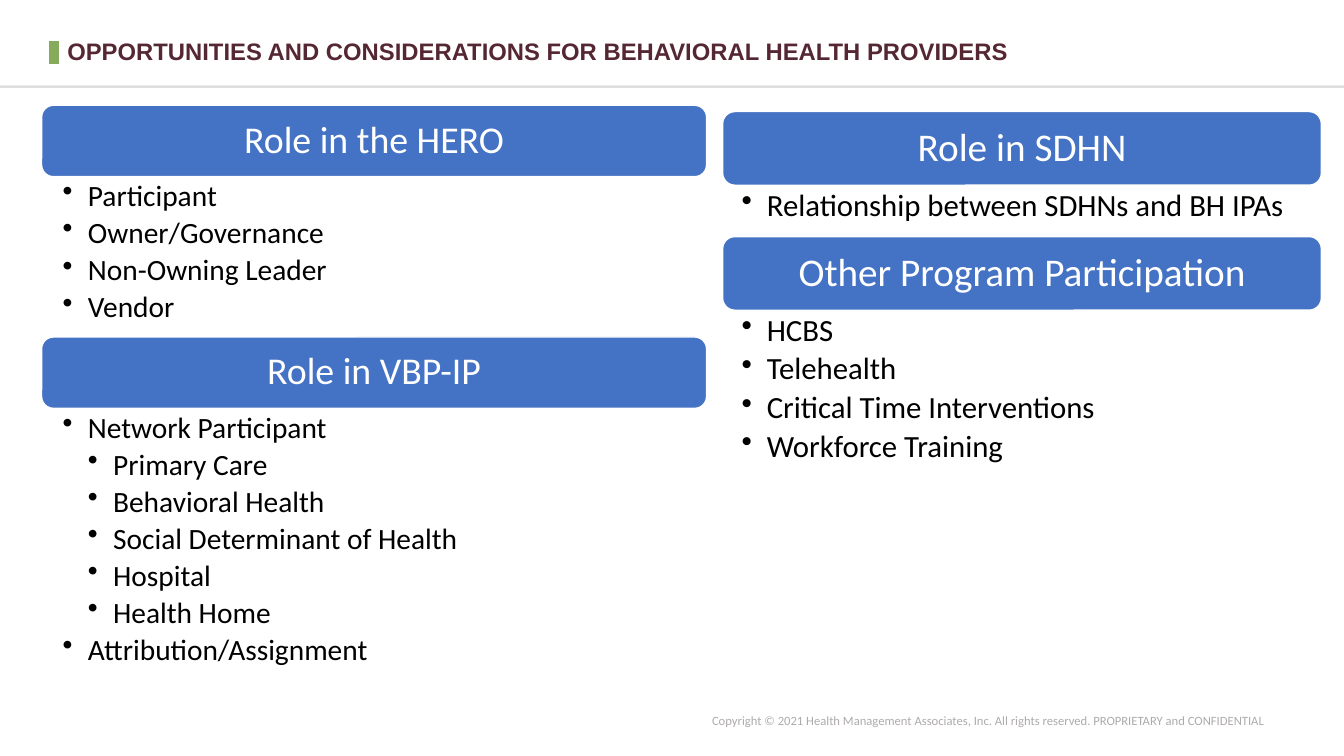
from pptx import Presentation
from pptx.dml.color import RGBColor
from pptx.enum.shapes import MSO_CONNECTOR, MSO_SHAPE
from pptx.enum.text import MSO_ANCHOR
from pptx.oxml.ns import qn
from pptx.util import Pt
from lxml.etree import SubElement

HUES = {
    "blue": "4472C4", "white": "FFFFFF", "black": "000000",
    "green": "86AB5D", "wine": "552733", "gray": "AFABAB",
}
STEP = 18

LEFT = [
    ("Role in the HERO", 114.5, [
        (1, "Participant"), (1, "Owner/Governance"),
        (1, "Non-Owning Leader"), (1, "Vendor")]),
    ("Role in VBP-IP", 198, [
        (1, "Network Participant"), (2, "Primary Care"),
        (2, "Behavioral Health"), (2, "Social Determinant of Health"),
        (2, "Hospital"), (2, "Health Home"), (1, "Attribution/Assignment")]),
]
RIGHT = [
    ("Role in SDHN", 36.7, [(1, "Relationship between SDHNs and BH IPAs")]),
    ("Other Program Participation", 118.8, [
        (1, "HCBS"), (1, "Telehealth"),
        (1, "Critical Time Interventions"), (1, "Workforce Training")]),
]


def hue(name):
    return RGBColor.from_string(HUES[name])


def write(frame, items, size, color, font="Calibri", bold=False,
          pad=(7.2, 3.6, 7.2, 3.6), anchor=MSO_ANCHOR.TOP, lead=None, gap=0):
    frame.word_wrap = True
    frame.vertical_anchor = anchor
    (frame.margin_left, frame.margin_top,
     frame.margin_right, frame.margin_bottom) = map(Pt, pad)
    for index, (level, text) in enumerate(items):
        para = frame.add_paragraph() if index else frame.paragraphs[0]
        para.level = level
        para.line_spacing = lead
        para.space_after = Pt(gap)
        if level:
            props = para._p.get_or_add_pPr()
            props.set("marL", str(Pt(level * STEP)))
            props.set("indent", str(-Pt(STEP)))
            SubElement(props, qn("a:buChar")).set("char", "•")
        run = para.add_run()
        run.text = text
        run.font.size = Pt(size)
        run.font.name = font
        run.font.bold = bold
        run.font.color.rgb = hue(color)


def label(slide, box, items, size, color, **style):
    shape = slide.shapes.add_textbox(*map(Pt, box))
    write(shape.text_frame, items, size, color, **style)


def rule(slide, ends, color, width, alpha=None):
    line = slide.shapes.add_connector(MSO_CONNECTOR.STRAIGHT, *map(Pt, ends))
    line.line.color.rgb = hue(color)
    line.line.width = Pt(width)
    SubElement(line._element.spPr, qn("a:effectLst"))
    if alpha:
        tint = line._element.spPr.find(".//" + qn("a:srgbClr"))
        SubElement(tint, qn("a:alpha")).set("val", str(alpha * 1000))


def banner(slide, box, text, size):
    shape = slide.shapes.add_shape(MSO_SHAPE.ROUNDED_RECTANGLE, *map(Pt, box))
    shape.shadow.inherit = False
    shape.fill.solid()
    shape.fill.fore_color.rgb = hue("blue")
    shape.line.color.rgb = hue("white")
    shape.line.width = Pt(1)
    write(shape.text_frame, [(0, text)], size, "white", lead=0.9,
          pad=(10.8, 3.6, 10.8, 3.6), anchor=MSO_ANCHOR.MIDDLE)


def column(slide, box, parts, head, big, small, pad):
    left, top, width = box
    for title, depth, items in parts:
        banner(slide, (left, top, width, head), title, big)
        label(slide, (left, top + head, width, depth), items, small, "black",
              pad=pad, lead=0.9, gap=small * 0.18)
        top += head + depth


def header(slide, box):
    left, top, width, height = box
    rule(slide, (left - 2.2, top + 6.5, left - 2.2, top + 22.4), "green", 7)
    rule(slide, (-10, top + 38.9, 960, top + 38.9), "black", 1.75, alpha=12)
    label(slide, box, [
        (0, "OPPORTUNITIES AND CONSIDERATIONS FOR BEHAVIORAL HEALTH PROVIDERS")
    ], 17, "wine", font="Arial", bold=True)


def footer(slide, box):
    label(slide, box, [
        (0, "Copyright © 2021 Health Management Associates, Inc. "
            "All rights reserved. PROPRIETARY and CONFIDENTIAL")
    ], 9, "gray")


def main():
    deck = Presentation()
    deck.slide_width, deck.slide_height = Pt(960), Pt(540)
    slide = deck.slides.add_slide(deck.slide_layouts[6])
    header(slide, (41, 23, 888, 28))
    column(slide, (29.7, 75.2, 475), LEFT, 51, 27, 21, (15.1, 3, 15.1, 3))
    column(slide, (516.2, 79.7, 427.7), RIGHT, 52.6, 28, 22, (13.6, 3, 15.8, 3))
    footer(slide, (501.5, 505.5, 413.5, 18))
    deck.save("out.pptx")


if __name__ == "__main__":
    main()
